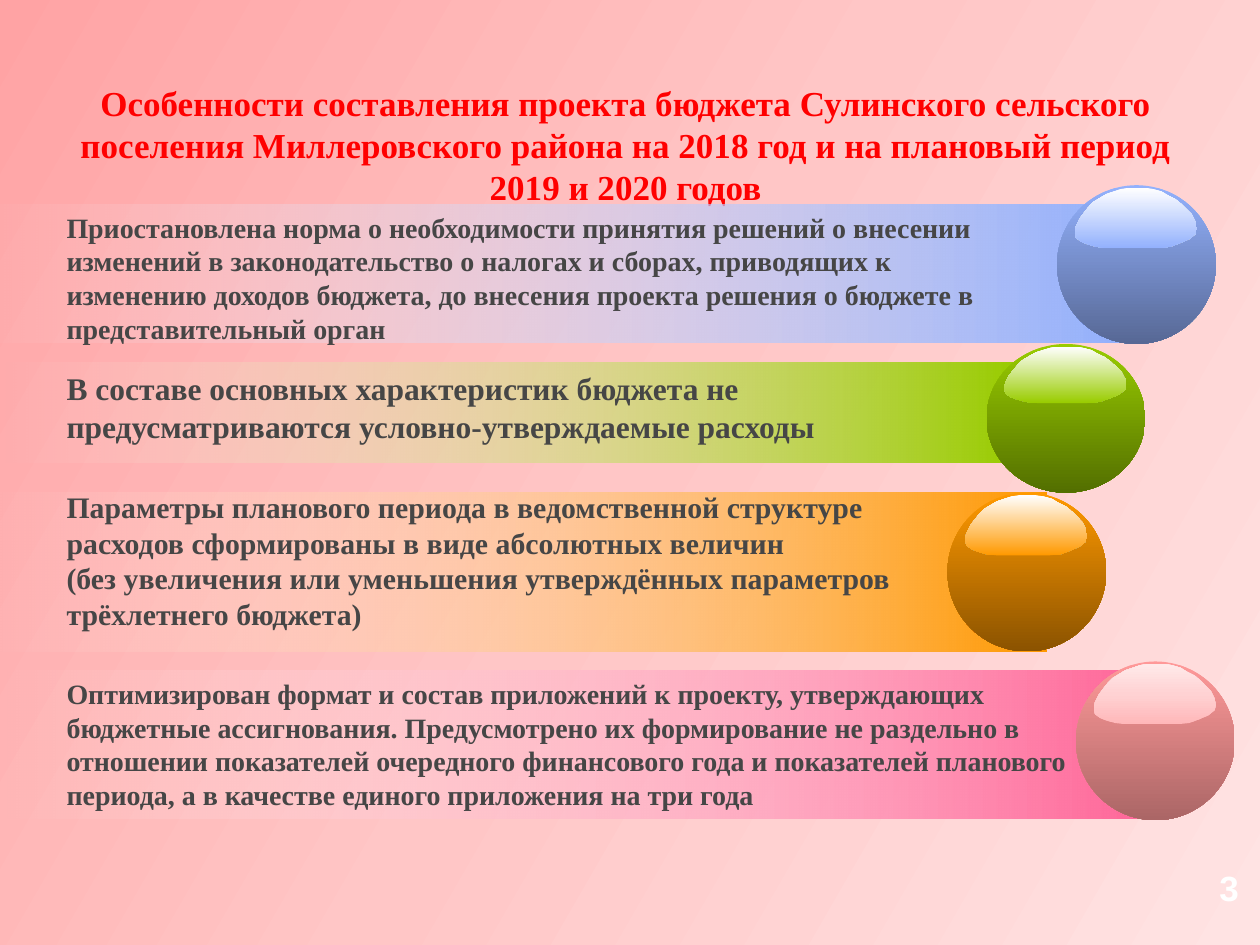
from lxml.etree import SubElement
from pptx import Presentation
from pptx.dml.color import RGBColor
from pptx.enum.shapes import MSO_SHAPE
from pptx.enum.text import MSO_ANCHOR, PP_ALIGN
from pptx.oxml.ns import qn
from pptx.util import Inches, Pt

HUES = {
    "white": "FFFFFF", "title": "FF0000", "text": "464646",
    "blue": "93B1FD", "green": "99CC00", "orange": "FF9900",
    "rose": "FF6699", "pink": "FF9999",
}
BACK = [(0, "FFA3A4"), (50, "FFC6C6"), (100, "FFE3E3")]
SHEEN = [(0, "FFB7B9"), (50, "FFD2D3"), (100, "FFE9E9")]
GLOSS = [
    (96, 27), (97, 32), (96, 36), (91, 40), (84, 43), (76, 46), (66, 47),
    (59, 47), (35, 47), (26, 47), (17, 46), (10, 44), (5, 42), (1, 39),
    (0, 34), (1, 30), (4, 24), (7, 20), (11, 15), (15, 11), (20, 8),
    (25, 5), (31, 3), (37, 1), (43, 0), (49, 0), (56, 0), (62, 1),
    (69, 3), (74, 6), (80, 9), (85, 13), (89, 17), (93, 21),
]
TITLE = ("Особенности составления проекта бюджета Сулинского сельского поселения "
         "Миллеровского района на 2018 год и на плановый период 2019 и 2020 годов")
ROWS = [
    {"bar": (-0.28, 1.62, 9.21, 1.1), "ball": (8.39, 1.47, 1.26, 1.26),
     "hues": ("blue", "blue"), "shade": 30, "box": (0.43, 1.62, 7.64, 1.18), "size": 16,
     "lines": ["Приостановлена норма о необходимости принятия решений о внесении изменений "
               "в законодательство о налогах и сборах, приводящих к изменению доходов бюджета, "
               "до внесения проекта решения о бюджете в представительный орган"]},
    {"bar": (0, 2.88, 8.07, 0.79), "ball": (7.83, 2.73, 1.26, 1.18),
     "hues": ("green", "green"), "shade": 25, "box": (0.43, 2.88, 7.24, 0.71), "size": 18,
     "lines": ["В составе основных характеристик бюджета не предусматриваются "
               "условно-утверждаемые расходы"]},
    {"bar": (-0.12, 3.91, 8.43, 1.26), "ball": (7.52, 3.91, 1.26, 1.26),
     "hues": ("orange", "orange"), "shade": 25, "box": (0.43, 3.83, 7.72, 1.51), "size": 17,
     "lines": ["Параметры планового периода в ведомственной структуре",
               "расходов сформированы в виде абсолютных величин \v(без увеличения или "
               "уменьшения утверждённых параметров трёхлетнего бюджета)"]},
    {"bar": (0, 5.32, 9.09, 1.18), "ball": (8.54, 5.25, 1.26, 1.26),
     "hues": ("rose", "pink"), "shade": 40, "box": (0.43, 5.32, 8.19, 1.18), "size": 16,
     "lines": ["Оптимизирован формат и состав приложений к проекту, утверждающих бюджетные "
               "ассигнования. Предусмотрено их формирование не раздельно в отношении "
               "показателей очередного финансового года и показателей планового периода, "
               "а в качестве единого приложения на три года"]},
]


class Deck:
    """Holds the style and the current slide, and draws each kind of element."""

    def __init__(self, font):
        self.font = font
        self.show = Presentation()
        self.show.slide_width, self.show.slide_height = Inches(10), Inches(7.5)
        self.slide = self.show.slides.add_slide(self.show.slide_layouts[5])

    def blend(self, item, fill, stops, angle):
        fill.gradient()
        grad = item._element.find(".//" + qn("a:gradFill"))
        grad.find(qn("a:lin")).set("ang", str(angle * 60000))
        slots = grad.find(qn("a:gsLst"))
        for old in list(slots):
            slots.remove(old)
        for spot, hue, *mods in stops:
            stop = SubElement(slots, qn("a:gs"), pos=str(spot * 1000))
            tint = SubElement(stop, qn("a:srgbClr"), val=hue)
            for name, rate in mods:
                SubElement(tint, qn("a:" + name), val=str(rate * 1000))

    def back(self, stops, angle):
        self.blend(self.slide, self.slide.background.fill, stops, angle)

    def paint(self, shape, stops, angle):
        shape.shadow.inherit = False
        shape.line.fill.background()
        self.blend(shape, shape.fill, stops, angle)

    def bar(self, place, hue):
        shape = self.slide.shapes.add_shape(MSO_SHAPE.RECTANGLE, *map(Inches, place))
        self.paint(shape, [(0, HUES["white"], ("alpha", 0)), (100, HUES[hue])], 0)

    def ball(self, place, hue, shade):
        left, top, width, height = place
        parts = self.slide.shapes.add_group_shape().shapes
        disc = parts.add_shape(MSO_SHAPE.OVAL, *map(Inches, place))
        self.paint(disc, [(0, HUES[hue]), (100, HUES[hue], ("shade", shade))], 90)
        pen = parts.build_freeform(*GLOSS[0], scale=Inches(0.01))
        pen.add_line_segments(GLOSS[1:], close=True)
        shine = pen.convert_to_shape(Inches(left + 0.14), Inches(top + 0.02))
        shine.height = Inches(height * 0.38)
        if hue == "pink":
            self.paint(shine, SHEEN, 270)
        else:
            self.paint(shine, [(0, HUES["white"]), (100, HUES[hue])], 90)

    def fill(self, shape, lines, size, hue, align, font=None):
        frame = shape.text_frame
        frame.word_wrap = True
        frame.vertical_anchor = MSO_ANCHOR.TOP
        frame.text = "\n".join(lines)
        for para in frame.paragraphs:
            para.alignment = align
            para.font.name = font or self.font
            para.font.size = Pt(size)
            para.font.bold = True
            para.font.color.rgb = RGBColor.from_string(HUES[hue])

    def title(self, place, text):
        shape = self.slide.shapes.title
        shape.left, shape.top, shape.width, shape.height = map(Inches, place)
        self.fill(shape, [text], 20, "title", PP_ALIGN.CENTER)

    def text(self, place, lines, size, hue="text", align=PP_ALIGN.LEFT, font=None):
        shape = self.slide.shapes.add_textbox(*map(Inches, place))
        self.fill(shape, lines, size, hue, align, font)


def main():
    deck = Deck("Times New Roman")
    deck.back(BACK, 30)
    deck.title((0.28, 0.6, 9.37, 1.11), TITLE)
    for row in ROWS:
        deck.bar(row["bar"], row["hues"][0])
        deck.ball(row["ball"], row["hues"][1], row["shade"])
        deck.text(row["box"], row["lines"], row["size"])
    deck.text((9.23, 6.83, 0.7, 0.43), ["3"], 20, "white", PP_ALIGN.RIGHT, "Arial")
    deck.show.save("out.pptx")


if __name__ == "__main__":
    main()
